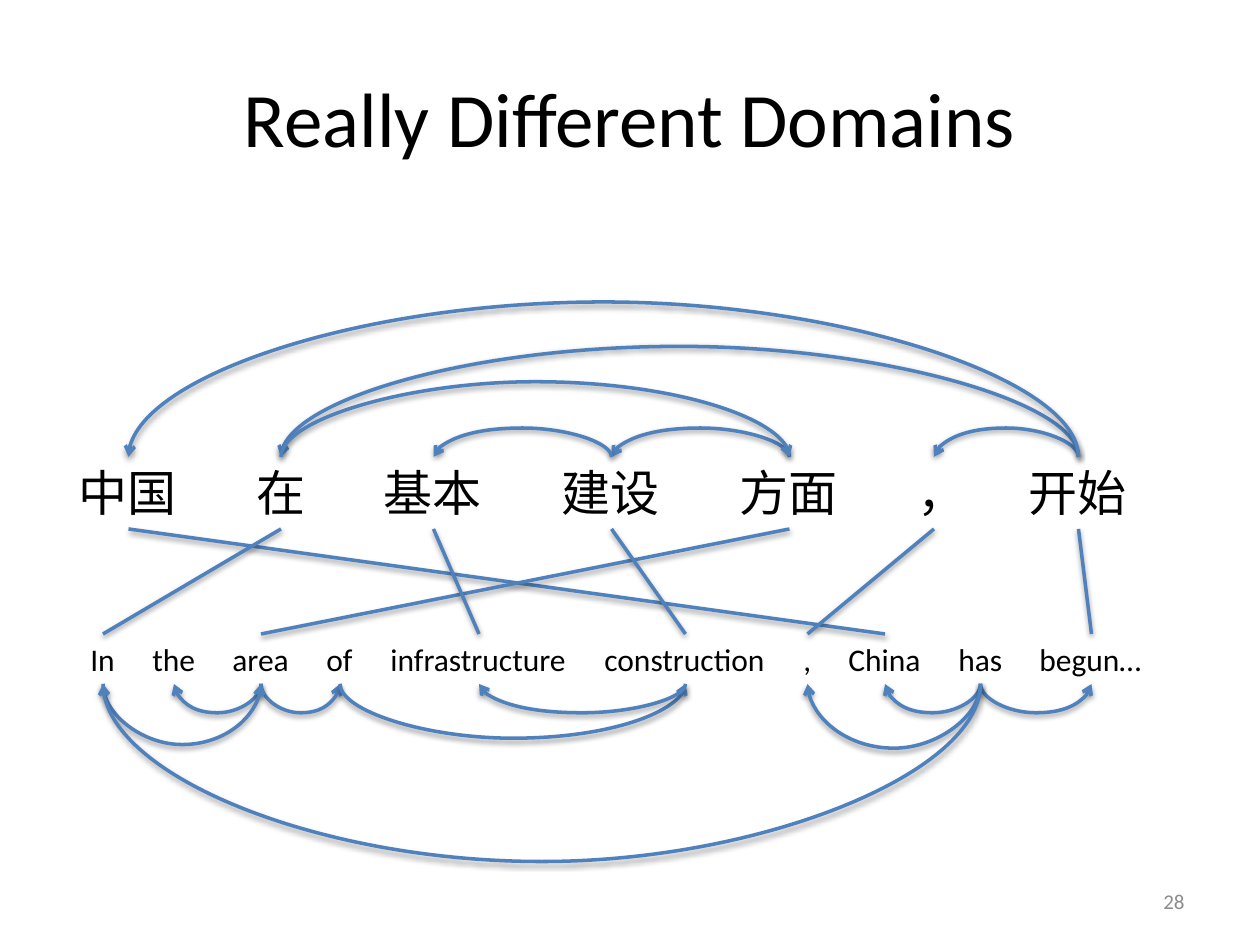
from dataclasses import dataclass

from lxml.etree import SubElement as Sub
from pptx import Presentation
from pptx.dml.color import RGBColor as Rgb
from pptx.enum.shapes import MSO_CONNECTOR as Conn
from pptx.enum.text import MSO_ANCHOR as Anchor, MSO_AUTO_SIZE as Fit, PP_ALIGN as Align
from pptx.oxml.ns import qn
from pptx.util import Pt

PX = 914400 / 126
THIN = 1588  # EMU between the two ends of an arc, across its span


@dataclass(frozen=True)
class Theme:
    font: str = "Calibri"
    ink: Rgb = Rgb(0, 0, 0)
    gray: Rgb = Rgb(0x8C, 0x8C, 0x8C)
    blue: Rgb = Rgb(0x4F, 0x81, 0xBD)
    title: int = 44
    source: int = 28
    target: int = 18
    note: int = 12
    line: int = 2


THEME = Theme()

# (word, box width)
SOURCE = [("中国", 125), ("在", 74), ("基本", 125), ("建设", 125),
          ("方面", 125), ("，", 58), ("开始", 125)]
TARGET = [("In", 50), ("the", 68), ("area", 82), ("of", 52),
          ("infrastructure", 202), ("construction", 187), (",", 33),
          ("China", 98), ("has", 69), ("begun…", 129)]
# (head word, dependent word, depth of the arc)
SOURCE_ARCS = [(6, 5, 32), (6, 1, 122), (6, 0, 171),
               (4, 3, 32), (3, 2, 32), (1, 4, 83)]
TARGET_ARCS = [(2, 1, 32), (2, 3, 32), (3, 5, 60), (5, 4, 32), (8, 7, 32),
               (8, 9, 32), (8, 6, 71), (0, 2, 67), (8, 0, 196)]
# (target word, source word)
LINKS = [(7, 0), (0, 1), (2, 4), (4, 2), (5, 3), (6, 5), (9, 6)]


def emu(*px):
    return [round(n * PX) for n in px]


def label(slide, text, box, size, color=THEME.ink, align=Align.LEFT, wrap=True):
    frame = slide.shapes.add_textbox(*emu(*box)).text_frame
    frame.text = text
    frame.word_wrap = wrap
    if wrap:
        frame.vertical_anchor = Anchor.MIDDLE
    else:
        frame.auto_size = Fit.SHAPE_TO_FIT_TEXT
    para = frame.paragraphs[0]
    para.alignment = align
    font = para.runs[0].font
    font.name, font.size, font.color.rgb = THEME.font, Pt(size), color


def words(slide, items, box, gap, size):
    """Set the words in a row with equal gaps; return their centres."""
    left, top, height = box
    mids = []
    for text, width in items:
        label(slide, text, (left, top, width, height), size, wrap=False)
        mids.append(left + width / 2)
        left += width + gap
    return mids


def style(wire, arrow=False):
    wire.line.color.rgb = THEME.blue
    wire.line.width = Pt(THEME.line)
    if arrow:
        Sub(wire.line._get_or_add_ln(), qn("a:tailEnd"), type="arrow")
    glow = Sub(Sub(wire._element.spPr, qn("a:effectLst")), qn("a:outerShdw"),
               blurRad="40000", dist="20000", dir="5400000", rotWithShape="0")
    black = Sub(glow, qn("a:srgbClr"), val="000000")
    Sub(black, qn("a:alpha"), val="38000")


def arc(slide, start, end, y, depth, up):
    """Draw a curved arrow as a thin upright connector turned on its side."""
    span, mid, y = emu(abs(end - start), (start + end) / 2, y)
    left, top = mid - THIN // 2, y - span // 2
    wire = slide.shapes.add_connector(Conn.CURVE, left, top, left + THIN, top + span)
    right = end > start
    form = wire._element.spPr.find(qn("a:xfrm"))
    form.set("rot", str((90 if right == up else 270) * 60000))
    form.set("flipH", str(int(right)))
    form.set("flipV", str(int(up)))
    shape = wire._element.spPr.find(qn("a:prstGeom"))
    shape.set("prst", "curvedConnector3")
    bend = round(emu(depth)[0] / THIN * 100000)
    Sub(shape.find(qn("a:avLst")), qn("a:gd"), name="adj1", fmla=f"val {bend}")
    style(wire, arrow=True)


def tree(slide, arcs, mids, y, up):
    for head, child, depth in arcs:
        arc(slide, mids[head], mids[child], y, depth, up)


def links(slide, low, high, bottom, top):
    for target, source in LINKS:
        ends = emu(low[target], bottom, high[source], top)
        style(slide.shapes.add_connector(Conn.STRAIGHT, *ends))


def diagram(slide, left, top):
    """Two parsed sentences, aligned word by word."""
    lower = top + 178
    high = words(slide, SOURCE, (left, top, 72), 53, THEME.source)
    low = words(slide, TARGET, (left + 12, lower, 50), 12, THEME.target)
    tree(slide, TARGET_ARCS, low, lower + 50, up=False)
    tree(slide, SOURCE_ARCS, high, top + 1, up=True)
    links(slide, low, high, lower, top + 73)


def main():
    deck = Presentation()
    deck.slide_width, deck.slide_height = emu(1260, 945)
    slide = deck.slides.add_slide(deck.slide_layouts[6])
    label(slide, "Really Different Domains", (63, 38, 1134, 157),
          THEME.title, align=Align.CENTER)
    label(slide, "28", (903, 876, 294, 50), THEME.note, THEME.gray, Align.RIGHT)
    diagram(slide, 66, 456)
    deck.save("out.pptx")


if __name__ == "__main__":
    main()
